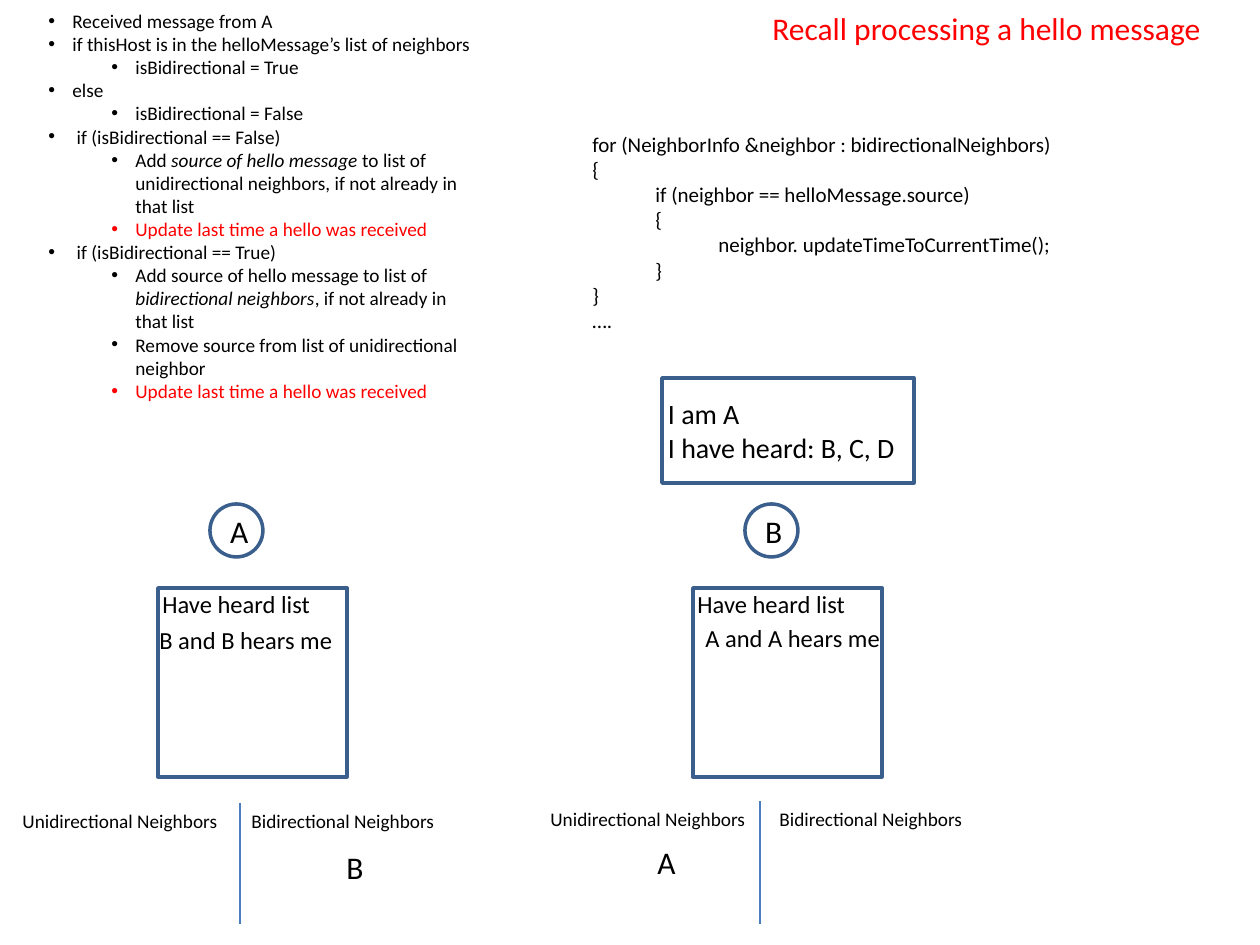
from lxml.etree import SubElement as Sub
from pptx import Presentation
from pptx.dml.color import RGBColor as RGB
from pptx.enum.shapes import MSO_CONNECTOR as Conn, MSO_SHAPE as Kind
from pptx.enum.text import MSO_ANCHOR as Anchor, MSO_AUTO_SIZE as Auto, PP_ALIGN as Align
from pptx.oxml.ns import qn
from pptx.util import Pt

PX = 914400 / 126
BLACK, RED, EDGE, RULE = "000000", "FF0000", "3A5F8C", "4B7EBC"

# Content: steps are (level, colour, runs); a run in a tuple is italic
STEPS = [
    (0, BLACK, ["Received message from A"]),
    (0, BLACK, ["if thisHost is in the helloMessage’s list of neighbors"]),
    (1, BLACK, ["isBidirectional = True"]),
    (0, BLACK, ["else"]),
    (1, BLACK, ["isBidirectional = False"]),
    (0, BLACK, [" if (isBidirectional == False)"]),
    (1, BLACK, ["Add ", ("source of hello message",),
                " to list of unidirectional neighbors, if not already in that list"]),
    (1, RED, ["Update last time a hello was received"]),
    (0, BLACK, [" if (isBidirectional == True)"]),
    (1, BLACK, ["Add source of hello message to list of ", ("bidirectional neighbors",),
                ", if not already in that list"]),
    (1, BLACK, ["Remove source from list of unidirectional neighbor"]),
    (1, RED, ["Update last time a hello was received"]),
]
CODE = [
    "for (NeighborInfo &neighbor : bidirectionalNeighbors)",
    "{",
    "\tif (neighbor == helloMessage.source)",
    "\t{",
    "\t\tneighbor. updateTimeToCurrentTime();",
    "\t}",
    "}",
    "….",
]
HELLO = ["I am A", "I have heard: B, C, D"]
# Hosts: name, left of list box, (label, left, top, width, height, size)
HOSTS = [
    ("A", 158, [("B and B hears me", 147, 619, 200, 43, 14),
                ("Unidirectional Neighbors", 10, 803, 222, 36, 11),
                ("Bidirectional Neighbors", 239, 803, 209, 36, 11),
                ("B", 334, 842, 43, 50, 18)], (240, 803)),
    ("B", 693, [("A and A hears me", 693, 617, 202, 43, 14),
                ("Unidirectional Neighbors", 538, 801, 222, 36, 11),
                ("Bidirectional Neighbors", 767, 801, 209, 36, 11),
                ("A", 645, 837, 44, 50, 18)], (760, 801)),
]


def px(*nums):
    return [round(n * PX) for n in nums]


def tint(text):
    return RGB.from_string(text)


def write(para, text, size, color=BLACK, slant=False):
    run = para.add_run()
    run.text = text
    font = run.font
    font.name, font.size, font.italic = "Calibri", Pt(size), slant
    font.color.rgb = tint(color)


def fill(frame, lines, size, color=BLACK, align=Align.LEFT):
    for i, line in enumerate(lines):
        para = frame.add_paragraph() if i else frame.paragraphs[0]
        para.alignment = align
        write(para, line, size, color)


def text(box, lines, size, color=BLACK, wrap=False):
    frame = slide.shapes.add_textbox(*px(*box)).text_frame
    frame.word_wrap = wrap
    frame.auto_size = Auto.SHAPE_TO_FIT_TEXT
    fill(frame, lines, size, color)
    return frame


def shape(kind, box):
    item = slide.shapes.add_shape(kind, *px(*box))
    item.shadow.inherit = False
    item.fill.background()
    item.line.color.rgb = tint(EDGE)
    item.line.width = Pt(2)
    item.text_frame.vertical_anchor = Anchor.MIDDLE
    return item.text_frame


def rule(x, y, end):
    line = slide.shapes.add_connector(Conn.STRAIGHT, *px(x, y, x, end))
    line.line.color.rgb = tint(RULE)
    line.line.width = Pt(0.75)
    Sub(line._element.spPr, qn("a:effectLst"))


def bullet(para, level):
    para.level = level
    props = para._p.get_or_add_pPr()
    hang = px(24)[0]
    props.set("marL", str(hang + px(63)[0] * level))
    props.set("indent", str(-hang))
    Sub(props, qn("a:buFont")).set("typeface", "Arial")
    Sub(props, qn("a:buChar")).set("char", "•")


deck = Presentation()
deck.slide_width, deck.slide_height = px(1260, 945)
slide = deck.slides.add_slide(deck.slide_layouts[6])

# Hosts with their lists and neighbor tables
for name, left, labels, (x, y) in HOSTS:
    fill(shape(Kind.OVAL, (left + 52, 504, 53, 53)), [name], 18, align=Align.CENTER)
    shape(Kind.RECTANGLE, (left, 588, 189, 189))
    text((left - 8, 583, 175, 43), ["Have heard list"], 14)
    for label, *box, size in labels:
        text(box, [label], size)
    rule(x, y, 924)

# Hello message
frame = shape(Kind.RECTANGLE, (662, 378, 252, 105))
frame.word_wrap = False
frame.margin_left = px(6)[0]
frame.margin_top = frame.margin_right = frame.margin_bottom = 0
fill(frame, HELLO, 16)

# Processing steps
frame = text((36, 3, 452, 549), [], 11, wrap=True)
for i, (level, color, runs) in enumerate(STEPS):
    para = frame.add_paragraph() if i else frame.paragraphs[0]
    bullet(para, level)
    for run in runs:
        slant = isinstance(run, tuple)
        write(para, run[0] if slant else run, 11, color, slant)

# Title and code
text((760, 3, 459, 50), ["Recall processing a hello message"], 18, RED)
text((580, 125, 630, 217), CODE, 12, wrap=True)

deck.save("out.pptx")
